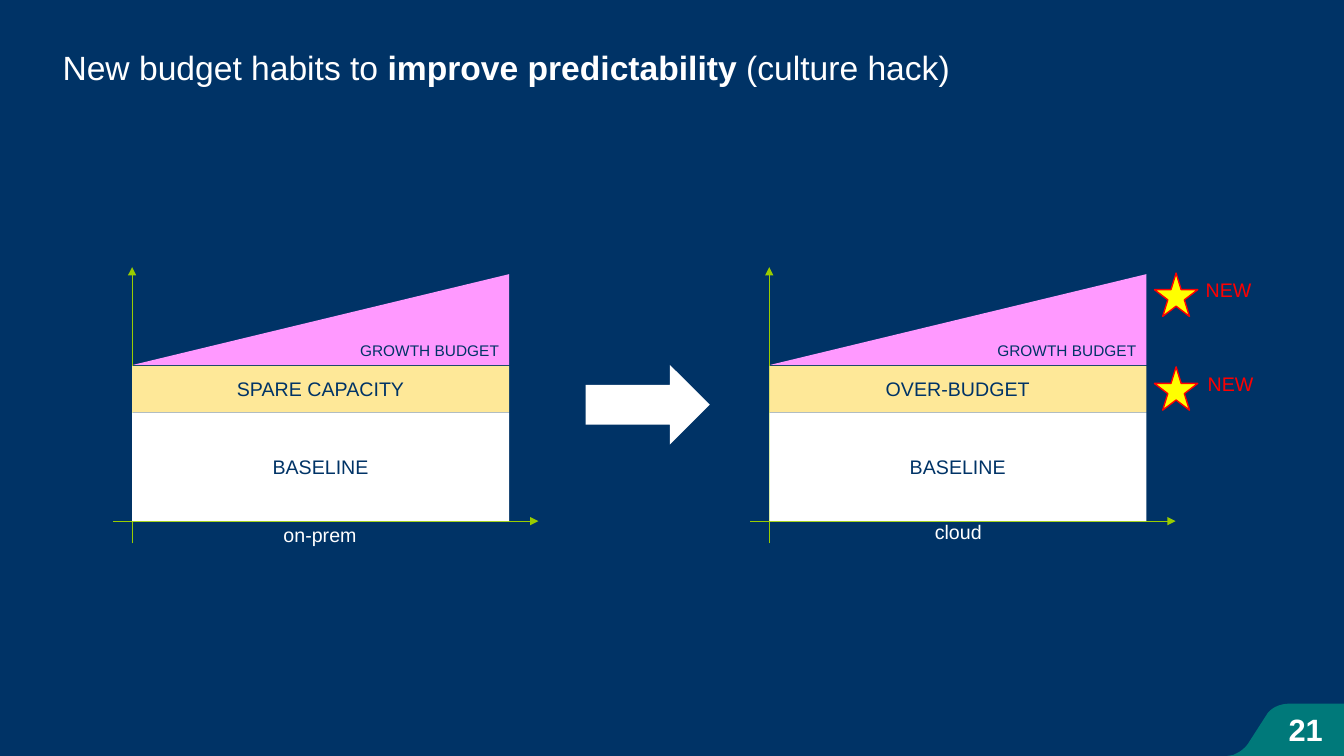
from dataclasses import dataclass

from lxml import etree
from pptx import Presentation
from pptx.dml.color import RGBColor
from pptx.enum.shapes import MSO_CONNECTOR, MSO_SHAPE
from pptx.enum.text import MSO_ANCHOR, MSO_AUTO_SIZE, PP_ALIGN
from pptx.oxml.ns import qn
from pptx.shapes.autoshape import Shape
from pptx.slide import Slide
from pptx.util import Inches, Pt

LEFT, CENTER, RIGHT = PP_ALIGN.LEFT, PP_ALIGN.CENTER, PP_ALIGN.RIGHT
TOP, MIDDLE, BOTTOM = MSO_ANCHOR.TOP, MSO_ANCHOR.MIDDLE, MSO_ANCHOR.BOTTOM
RECTANGLE, STAR = MSO_SHAPE.RECTANGLE, MSO_SHAPE.STAR_5_POINT
RIGHT_ARROW = MSO_SHAPE.RIGHT_ARROW
STRAIGHT = MSO_CONNECTOR.STRAIGHT
FIT_SHAPE, FIT_NONE = MSO_AUTO_SIZE.SHAPE_TO_FIT_TEXT, MSO_AUTO_SIZE.NONE

Point = tuple[float, float]
Box = tuple[float, float, float, float]


@dataclass(frozen=True)
class Theme:
    font: str = "Arial"
    navy: str = "003366"
    white: str = "FFFFFF"
    axis: str = "99CC00"
    spare: str = "FEE898"
    growth: str = "FF99FF"
    star: str = "FFFF00"
    new: str = "FF0000"
    page_tab: str = "00797A"
    title_size: float = 24
    page_size: float = 22
    label_size: float = 14
    growth_size: float = 11


@dataclass(frozen=True)
class BudgetChart:
    left: float
    reserve: str
    caption: str
    caption_box: Box


@dataclass(frozen=True)
class NewBadge:
    top: float
    label_left: float


THEME = Theme()
BUDGET_CHARTS = [
    BudgetChart(1.31, "SPARE CAPACITY", "on-prem", (2.71, 5.14, 0.93, 0.34)),
    BudgetChart(7.63, "OVER-BUDGET", "cloud", (9.17, 5.11, 0.67, 0.34)),
]
NEW_BADGES = [NewBadge(2.71, 11.86), NewBadge(3.64, 11.88)]
TITLE = [("New budget habits to ", False), ("improve predictability", True),
         (" (culture hack)", False)]


def rgb(color: str) -> RGBColor:
    return RGBColor.from_string(color)


def write(shape: Shape, text: str | list[tuple[str, bool]], *,
          size: float = THEME.label_size, color: str = THEME.white,
          bold: bool = False, align: PP_ALIGN = CENTER,
          anchor: MSO_ANCHOR = MIDDLE, wrap: bool = True,
          fit: MSO_AUTO_SIZE = FIT_NONE) -> None:
    """Fill a shape with one paragraph, given as text or (text, bold) runs."""
    frame = shape.text_frame
    frame.word_wrap, frame.auto_size = wrap, fit
    frame.vertical_anchor = anchor
    paragraph = frame.paragraphs[0]
    paragraph.alignment = align
    for words, is_bold in [(text, bold)] if isinstance(text, str) else text:
        run = paragraph.add_run()
        run.text = words
        run.font.name, run.font.size = THEME.font, Pt(size)
        run.font.bold = is_bold
        run.font.color.rgb = rgb(color)


def paint(shape: Shape, fill: str, outline: str | None = None) -> Shape:
    shape.shadow.inherit = False
    shape.fill.solid()
    shape.fill.fore_color.rgb = rgb(fill)
    if outline:
        shape.line.color.rgb = rgb(outline)
        shape.line.width = Pt(1)
    else:
        shape.line.fill.background()
    return shape


def add_preset(slide: Slide, preset: MSO_SHAPE, box: Box, fill: str,
               outline: str | None = None) -> Shape:
    return paint(slide.shapes.add_shape(preset, *map(Inches, box)), fill, outline)


def add_outline(slide: Slide, points: list[Point], fill: str) -> Shape:
    corners = [(Inches(x), Inches(y)) for x, y in points]
    builder = slide.shapes.build_freeform(*corners[0])
    builder.add_line_segments(corners[1:], close=True)
    return paint(builder.convert_to_shape(), fill)


def add_label(slide: Slide, box: Box, text: str, **text_format) -> Shape:
    label = slide.shapes.add_textbox(*map(Inches, box))
    write(label, text, wrap=False, **text_format)
    return label


def add_axis(slide: Slide, start: Point, end: Point) -> None:
    axis = slide.shapes.add_connector(STRAIGHT, *map(Inches, start + end))
    axis.line.color.rgb = rgb(THEME.axis)
    axis.line.width = Pt(0.5)
    etree.SubElement(axis.line._get_or_add_ln(), qn("a:tailEnd"), type="triangle")
    etree.SubElement(axis._element.spPr, qn("a:effectLst"))


def curve(start: Point, bend_1: Point, bend_2: Point, end: Point,
          steps: int = 10) -> list[Point]:
    """Sample a cubic Bezier curve, leaving out its start."""
    points = []
    for step in range(1, steps + 1):
        t = step / steps
        weights = ((1 - t) ** 3, 3 * t * (1 - t) ** 2, 3 * t * t * (1 - t), t ** 3)
        controls = (start, bend_1, bend_2, end)
        points.append((sum(w * p[0] for w, p in zip(weights, controls)),
                       sum(w * p[1] for w, p in zip(weights, controls))))
    return points


def add_page_tab(slide: Slide) -> None:
    points = [(12.8, 6.98), (13.33, 6.98), (13.33, 7.5), (12.17, 7.5), (12.23, 7.49)]
    points += curve((12.23, 7.49), (12.28, 7.47), (12.35, 7.43), (12.39, 7.36))
    points += [(12.57, 7.08)]
    points += curve((12.57, 7.08), (12.57, 7.08), (12.63, 6.98), (12.8, 6.98))
    add_outline(slide, points, THEME.page_tab)
    number = add_label(slide, (12.57, 7.07, 0.76, 0.32), "21",
                       size=THEME.page_size, bold=True)
    frame = number.text_frame
    frame.margin_left = frame.margin_right = 0
    frame.margin_top = frame.margin_bottom = 0


def add_title(slide: Slide) -> None:
    title = slide.shapes.title
    title.left, title.top = Inches(0.52), Inches(0.42)
    title.width, title.height = Inches(11.8), Inches(2.93)
    write(title, TITLE, size=THEME.title_size, align=LEFT, anchor=TOP)


def add_budget_chart(slide: Slide, chart: BudgetChart) -> None:
    left, width = chart.left, 3.74
    add_axis(slide, (left, 5.39), (left, 2.65))
    add_axis(slide, (left - 0.19, 5.17), (left + 4.03, 5.17))
    for text, top, height, fill in (("BASELINE", 4.09, 1.08, THEME.white),
                                    (chart.reserve, 3.63, 0.46, THEME.spare)):
        layer = add_preset(slide, RECTANGLE, (left, top, width, height), fill)
        write(layer, text, color=THEME.navy)
    right = left + width
    growth = add_outline(slide, [(left + 0.01, 3.62), (right, 3.62), (right, 2.72)],
                         THEME.growth)
    write(growth, "GROWTH BUDGET", size=THEME.growth_size, color=THEME.navy,
          align=RIGHT, anchor=BOTTOM)
    add_label(slide, chart.caption_box, chart.caption, anchor=TOP, fit=FIT_SHAPE)


def add_new_badge(slide: Slide, badge: NewBadge) -> None:
    add_preset(slide, STAR, (11.45, badge.top, 0.43, 0.43), THEME.star, THEME.new)
    add_label(slide, (badge.label_left, badge.top, 1.07, 0.54), "NEW",
              color=THEME.new, align=LEFT, anchor=TOP, fit=FIT_SHAPE)


def main() -> None:
    deck = Presentation()
    deck.slide_width, deck.slide_height = Inches(13.33), Inches(7.5)
    slide = deck.slides.add_slide(deck.slide_layouts[5])
    slide.background.fill.solid()
    slide.background.fill.fore_color.rgb = rgb(THEME.navy)
    add_page_tab(slide)
    add_title(slide)
    for chart in BUDGET_CHARTS:
        add_budget_chart(slide, chart)
    add_preset(slide, RIGHT_ARROW, (5.81, 3.62, 1.23, 0.79), THEME.white)
    for badge in NEW_BADGES:
        add_new_badge(slide, badge)
    deck.save("out.pptx")


if __name__ == "__main__":
    main()
